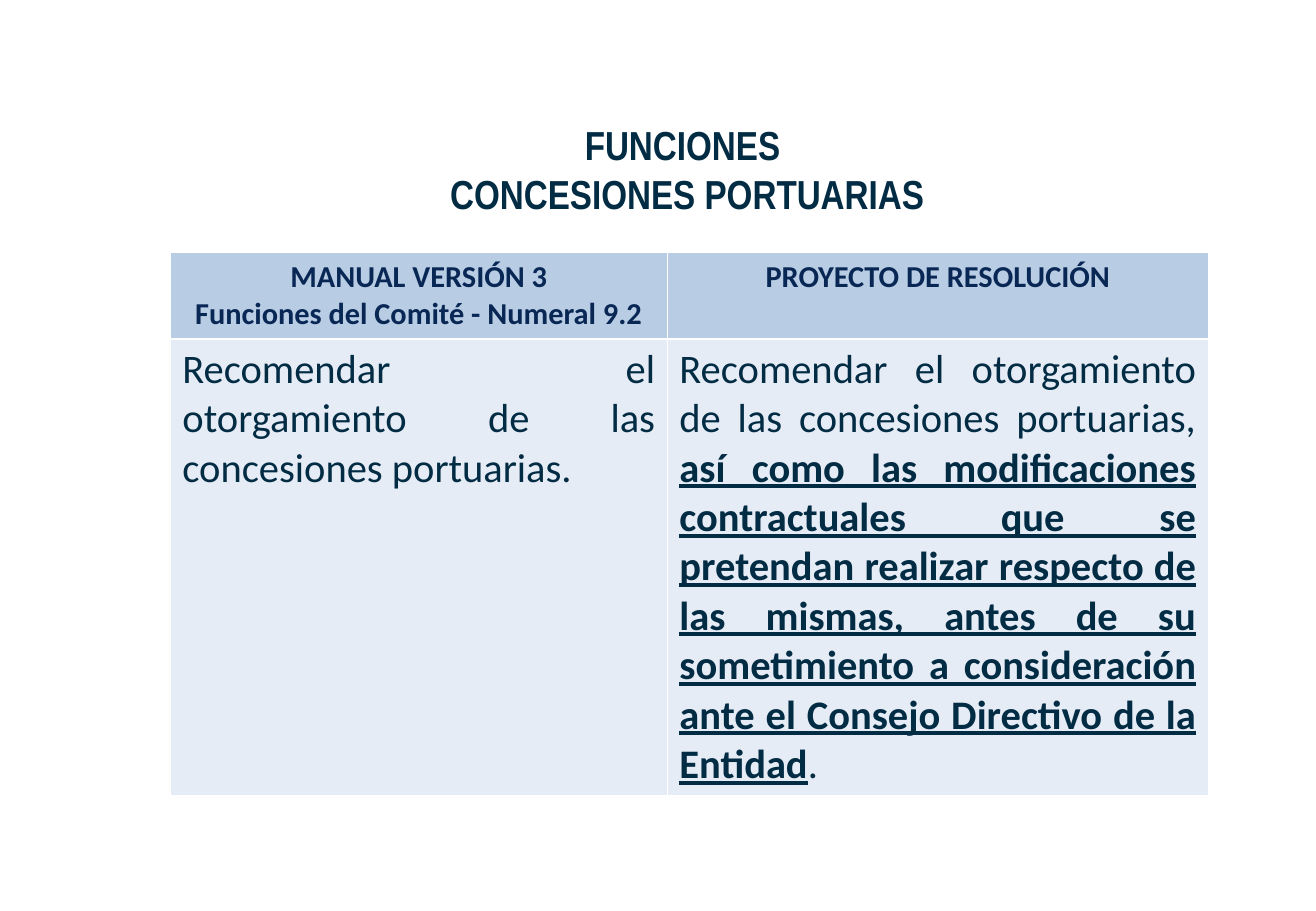
from pptx import Presentation
from pptx.dml.color import RGBColor
from pptx.enum.text import MSO_ANCHOR, MSO_AUTO_SIZE, PP_ALIGN
from pptx.util import Cm, Pt

CENTER, JUSTIFY = PP_ALIGN.CENTER, PP_ALIGN.JUSTIFY
MIDDLE = MSO_ANCHOR.MIDDLE
NO_AUTOFIT = MSO_AUTO_SIZE.NONE

INK = RGBColor(0x02, 0x2B, 0x44)
NAVY = RGBColor(0x08, 0x27, 0x54)
HEADER_BLUE = RGBColor(0xB8, 0xCC, 0xE4)
BODY_BLUE = RGBColor(0xE6, 0xEC, 0xF5)

TITLE_FORMAT = {"name": "Arial Narrow", "size": Pt(24), "bold": True}
HEADER_FORMAT = {"name": "Calibri", "size": Pt(18), "bold": True}
BODY_FORMAT = {"name": "Calibri", "size": Pt(24), "bold": False}
ADDED_FORMAT = {"name": "Calibri", "size": Pt(24), "bold": True, "underline": True}


def add_span(para, text, style, color):
    span = para.add_run()
    span.text = text
    for name, value in style.items():
        setattr(span.font, name, value)
    span.font.color.rgb = color


deck = Presentation()
deck.slide_width, deck.slide_height = Cm(27.51), Cm(19.05)
page = deck.slides.add_slide(deck.slide_layouts[5])

# Title
title = page.shapes.title
title.left, title.top, title.width, title.height = Cm(2.67), Cm(1.73), Cm(23.39), Cm(3.6)
title.text_frame.auto_size = NO_AUTOFIT
title.text_frame.vertical_anchor = MIDDLE
para = title.text_frame.paragraphs[0]
para.alignment = CENTER
add_span(para, "FUNCIONES ", TITLE_FORMAT, INK)
para.add_line_break()
add_span(para, "CONCESIONES PORTUARIAS", TITLE_FORMAT, INK)

# Comparison table: each cell is a list of paragraphs, each a list of spans
HEADERS = [
    [[("MANUAL VERSIÓN 3", HEADER_FORMAT)],
     [("Funciones del Comité - Numeral 9.2", HEADER_FORMAT)]],
    [[("PROYECTO DE RESOLUCIÓN", HEADER_FORMAT)]],
]
FUNCTIONS = [
    [[("Recomendar el otorgamiento de las concesiones portuarias.", BODY_FORMAT)]],
    [[("Recomendar el otorgamiento de las concesiones portuarias, ", BODY_FORMAT),
      ("así como las modificaciones contractuales que se pretendan realizar "
       "respecto de las mismas, antes de su sometimiento a consideración ante "
       "el Consejo Directivo de la Entidad", ADDED_FORMAT),
      (".", BODY_FORMAT)]],
]
ROWS = [
    (Cm(1.78), HEADERS, HEADER_BLUE, NAVY, CENTER),
    (Cm(9.5), FUNCTIONS, BODY_BLUE, INK, JUSTIFY),
]
table = page.shapes.add_table(2, 2, Cm(3.56), Cm(5.28), Cm(21.7), Cm(11.28)).table
table.columns[0].width, table.columns[1].width = Cm(10.39), Cm(11.31)

for row, (height, cells, fill, color, alignment) in enumerate(ROWS):
    table.rows[row].height = height
    for column, paragraphs in enumerate(cells):
        cell = table.cell(row, column)
        cell.fill.solid()
        cell.fill.fore_color.rgb = fill
        for index, spans in enumerate(paragraphs):
            frame = cell.text_frame
            para = frame.add_paragraph() if index else frame.paragraphs[0]
            para.alignment = alignment
            for text, style in spans:
                add_span(para, text, style, color)

deck.save("out.pptx")
